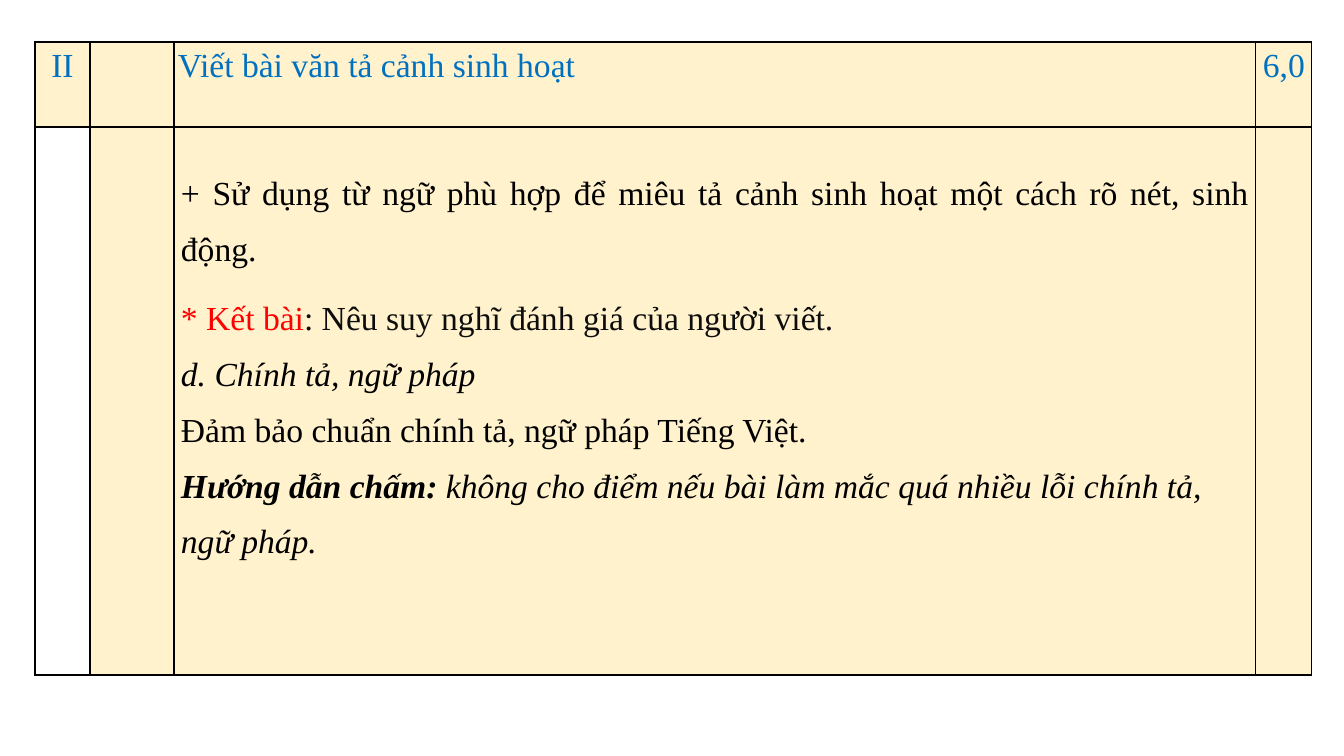
import pptx
import pptx.util
import pptx.dml.color
import pptx.enum.text
import pptx.oxml

PX = 914400 / 100.8
FONT = "Times New Roman"
HEX = {"cream": "FFF2CC", "blue": "0070C0", "red": "FF0000",
       "black": "000000", "dark": "0D0D0D"}
ALIGN = pptx.enum.text.PP_ALIGN
COLS = [55, 84, 1082, 56]
ROWS = [85, 548]
HEAD = ["II", "", "Viết bài văn tả cảnh sinh hoạt", "6,0"]
NS = "http://schemas.openxmlformats.org/drawingml/2006/main"


def px(n):
    return pptx.util.Emu(round(n * PX))


def rgb(name):
    return pptx.dml.color.RGBColor.from_string(HEX[name])


def add_text(para, text, color="black", bold=False, italic=False):
    run = para.add_run()
    run.text = text
    font = run.font
    font.name, font.size = FONT, pptx.util.Pt(24)
    font.bold, font.italic = bold, italic
    font.color.rgb = rgb(color)


def space(para, line, align=ALIGN.LEFT, before=0, after=0):
    para.alignment = align
    para.line_spacing = line
    para.space_before = pptx.util.Pt(before)
    para.space_after = pptx.util.Pt(after)


def pad(cell, side, top=0):
    cell.margin_left = cell.margin_right = px(side)
    cell.margin_top, cell.margin_bottom = px(top), 0


def style(cell, filled):
    """Draw the four borders, then set the fill."""
    props = cell._tc.get_or_add_tcPr()
    for side in "LRTB":
        props.append(pptx.oxml.parse_xml(
            f'<a:ln{side} xmlns:a="{NS}" w="12700"><a:solidFill>'
            f'<a:srgbClr val="{HEX["black"]}"/></a:solidFill></a:ln{side}>'))
    if filled:
        cell.fill.solid()
        cell.fill.fore_color.rgb = rgb("cream")
    else:
        cell.fill.background()


def add_grid(slide):
    frame = slide.shapes.add_table(len(ROWS), len(COLS), px(35), px(42),
                                   px(sum(COLS)), px(sum(ROWS)))
    grid = frame.table
    grid.first_row = grid.horz_banding = False
    for col, width in zip(grid.columns, COLS):
        col.width = px(width)
    for row, height in zip(grid.rows, ROWS):
        row.height = px(height)
    for r in range(len(ROWS)):
        for c in range(len(COLS)):
            style(grid.cell(r, c), filled=(r, c) != (1, 0))
    return grid


def fill_head(grid):
    for c, text in enumerate(HEAD):
        if not text:
            continue
        cell = grid.cell(0, c)
        pad(cell, 4)
        para = cell.text_frame.paragraphs[0]
        space(para, 1.15, ALIGN.JUSTIFY if c == 2 else ALIGN.CENTER, 2, 1)
        add_text(para, text, color="blue")


def fill_body(cell):
    pad(cell, 7, top=30)
    lines = [
        [("+ Sử dụng từ ngữ phù hợp để miêu tả cảnh sinh hoạt "
          "một cách rõ nét, sinh động.", {})],
        [("* Kết bài", {"color": "red"}),
         (": Nêu suy nghĩ đánh giá của người viết.", {"color": "dark"})],
        [("d. Chính tả, ngữ pháp", {"italic": True})],
        [("Đảm bảo chuẩn chính tả, ngữ pháp Tiếng Việt.", {})],
        [("Hướng dẫn chấm: ", {"bold": True, "italic": True}),
         ("không cho điểm nếu bài làm mắc quá nhiều lỗi chính tả, "
          "ngữ pháp.", {"italic": True})],
    ]
    frame = cell.text_frame
    for i, runs in enumerate(lines):
        para = frame.add_paragraph() if i else frame.paragraphs[0]
        if i:
            space(para, 1.5)
        else:
            space(para, 1.5, ALIGN.JUSTIFY, after=10)
        for text, form in runs:
            add_text(para, text, **form)


def main():
    deck = pptx.Presentation()
    deck.slide_width, deck.slide_height = px(1344), px(756)
    slide = deck.slides.add_slide(deck.slide_layouts[6])
    grid = add_grid(slide)
    fill_head(grid)
    fill_body(grid.cell(1, 2))
    deck.save("out.pptx")


if __name__ == "__main__":
    main()
